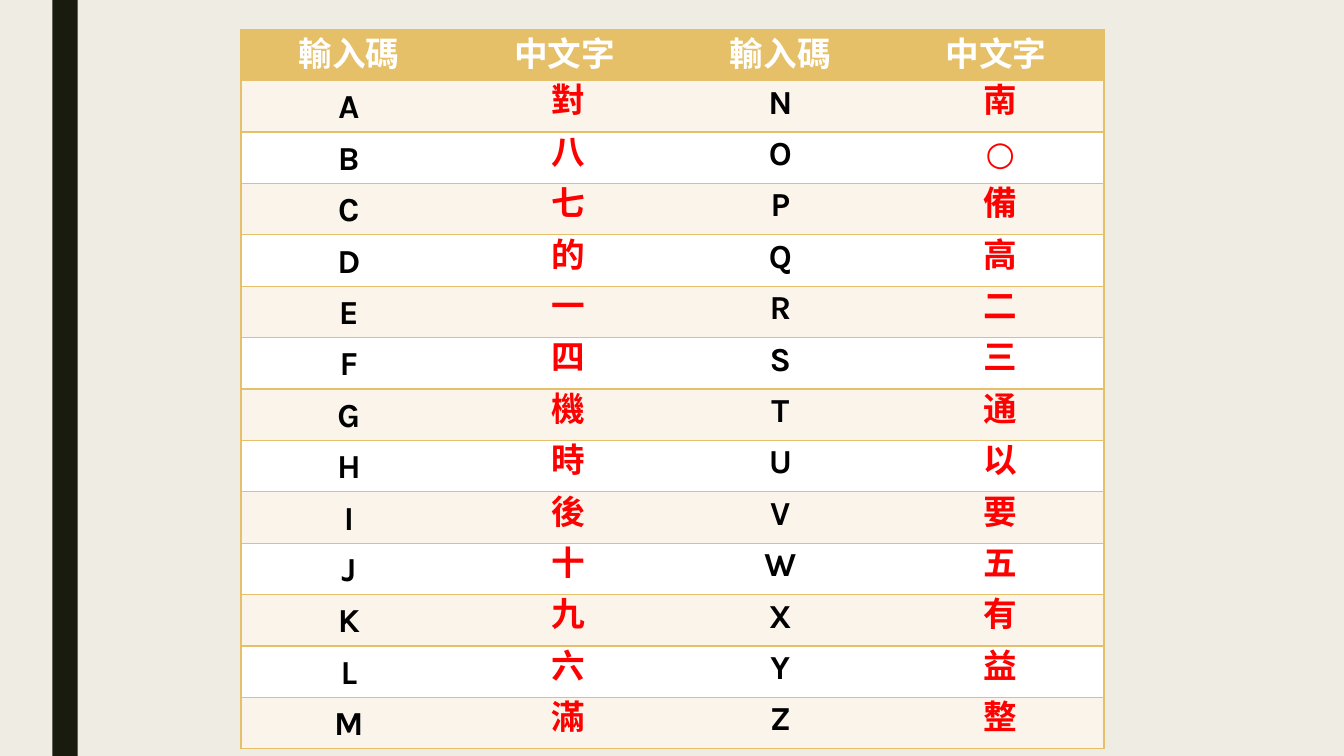
from lxml import etree
from pptx import Presentation
from pptx.dml.color import RGBColor
from pptx.enum import shapes, text
from pptx.oxml import ns
from pptx.util import Inches, Pt

HEADERS = ("輸入碼", "中文字") * 2
LEFT_CODES = "ABCDEFGHIJKLM"
LEFT_WORDS = "對八七的一四機時後十九六滿"
RIGHT_CODES = "NOPQRSTUVWXYZ"
RIGHT_WORDS = "南○備高二三通以要五有益整"

GOLD, CREAM, WHITE = "E6C069", "FAF4EB", "FFFFFF"
BLACK, RED, BAR, PAPER = "000000", "FF0000", "191B0E", "EFEDE3"
COL_W, ROW_H = 2.14, 0.51


def paint(fill, color):
    fill.solid()
    fill.fore_color.rgb = RGBColor.from_string(color)


def set_borders(cell, sides):
    tcPr = cell._tc.get_or_add_tcPr()
    for i, side in enumerate("LRTB"):
        ln = etree.Element(ns.qn(f"a:ln{side}"), w=str(Pt(1)))
        if side in sides:
            fill = etree.SubElement(ln, ns.qn("a:solidFill"))
            etree.SubElement(fill, ns.qn("a:srgbClr"), val=GOLD)
        else:
            etree.SubElement(ln, ns.qn("a:noFill"))
        tcPr.insert(i, ln)


def fill_cell(cell, words, color, back, anchor, sides):
    paint(cell.fill, back)
    set_borders(cell, sides)
    cell.margin_left = cell.margin_right = Inches(0.05)
    cell.margin_top = cell.margin_bottom = 0
    cell.vertical_anchor = anchor
    p = cell.text_frame.paragraphs[0]
    p.alignment = text.PP_ALIGN.CENTER
    p.line_spacing = Pt(30)
    r = p.add_run()
    r.text = words
    r.font.name = "Karla"
    r.font.size = Pt(24)
    r.font.bold = True
    r.font.color.rgb = RGBColor.from_string(color)


def main():
    prs = Presentation()
    prs.slide_width, prs.slide_height = Inches(13.33), Inches(7.5)
    s = prs.slides.add_slide(prs.slide_layouts[6])
    paint(s.background.fill, PAPER)

    bar = s.shapes.add_shape(shapes.MSO_SHAPE.RECTANGLE, Inches(0.52), 0,
                             Inches(0.25), prs.slide_height)
    bar.shadow.inherit = False
    paint(bar.fill, BAR)
    bar.line.fill.background()

    rows = [HEADERS]
    for a, b, c, d in zip(LEFT_CODES, LEFT_WORDS, RIGHT_CODES, RIGHT_WORDS):
        rows.append((a, f" {b}", c, f" {d}"))
    cols = len(HEADERS)
    table = s.shapes.add_table(len(rows), cols, Inches(2.39), Inches(0.29),
                               Inches(COL_W * cols), Inches(ROW_H * len(rows))).table
    for column in table.columns:
        column.width = Inches(COL_W)
    for i, row in enumerate(rows):
        table.rows[i].height = Inches(ROW_H)
        for j, words in enumerate(row):
            if i == 0:
                color, back = WHITE, GOLD
            else:
                color, back = (BLACK, RED)[j % 2], (WHITE, CREAM)[i % 2]
            middle = i == 0 or j == 0
            anchor = text.MSO_ANCHOR.MIDDLE if middle else text.MSO_ANCHOR.TOP
            sides = "TB" + {0: "L", cols - 1: "R"}.get(j, "")
            fill_cell(table.cell(i, j), words, color, back, anchor, sides)

    prs.save("out.pptx")


if __name__ == "__main__":
    main()
